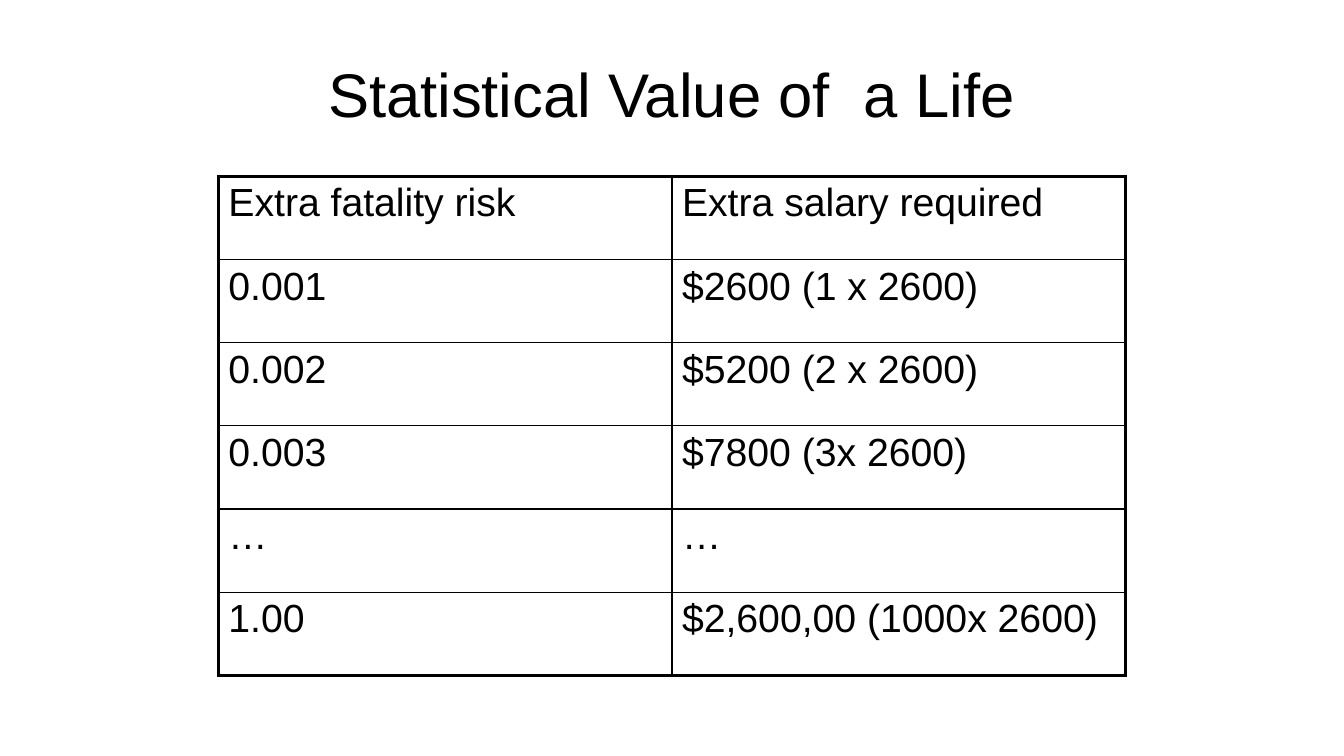
from lxml.etree import SubElement
from pptx import Presentation
from pptx.dml.color import RGBColor
from pptx.enum.text import MSO_ANCHOR as Anchor, PP_ALIGN as Align
from pptx.oxml.ns import qn
from pptx.util import Pt

BLACK = "000000"
THICK, THIN = 2.25, 1
ROWS = [
    ("Extra fatality risk", "Extra salary required"),
    ("0.001", "$2600 (1 x 2600)"),
    ("0.002", "$5200 (2 x 2600)"),
    ("0.003", "$7800 (3x 2600)"),
    ("…", "…"),
    ("1.00", "$2,600,00 (1000x 2600)"),
]


def color(value):
    return RGBColor.from_string(value)


def add_span(para, text, size):
    span = para.add_run()
    span.text = text
    span.font.name = "Arial"
    span.font.size = Pt(size)
    span.font.color.rgb = color(BLACK)


def add_title(page, text):
    box = page.shapes.add_textbox(Pt(48), Pt(21.6), Pt(864), Pt(90))
    frame = box.text_frame
    frame.word_wrap = True
    frame.vertical_anchor = Anchor.MIDDLE
    para = frame.paragraphs[0]
    para.alignment = Align.CENTER
    add_span(para, text, 44)


def set_borders(cell, widths):
    properties = cell._tc.get_or_add_tcPr()
    for index, (side, width) in enumerate(widths.items()):
        line = SubElement(properties, qn(f"a:ln{side}"), w=str(Pt(width)))
        fill = SubElement(line, qn("a:solidFill"))
        SubElement(fill, qn("a:srgbClr"), val=str(color(BLACK)))
        properties.insert(index, line)


def add_grid(page, rows, left, top, column_width, row_height):
    row_count, column_count = len(rows), len(rows[0])
    grid = page.shapes.add_table(
        row_count, column_count, Pt(left), Pt(top),
        Pt(column_width * column_count), Pt(row_height * row_count),
    ).table
    for column in grid.columns:
        column.width = Pt(column_width)
    for r, texts in enumerate(rows):
        grid.rows[r].height = Pt(row_height)
        for c, text in enumerate(texts):
            cell = grid.cell(r, c)
            cell.fill.background()
            add_span(cell.text_frame.paragraphs[0], text, 28)
            set_borders(cell, {
                "L": THICK if c == 0 else THIN,
                "R": THICK if c == column_count - 1 else THIN,
                "T": THICK if r == 0 else THIN,
                "B": THICK if r == row_count - 1 else THIN,
            })


def main():
    deck = Presentation()
    deck.slide_width, deck.slide_height = Pt(960), Pt(540)
    page = deck.slides.add_slide(deck.slide_layouts[6])
    add_title(page, "Statistical Value of  a Life")
    add_grid(page, ROWS, left=156, top=126, column_width=324, row_height=59.4)
    deck.save("out.pptx")


if __name__ == "__main__":
    main()
